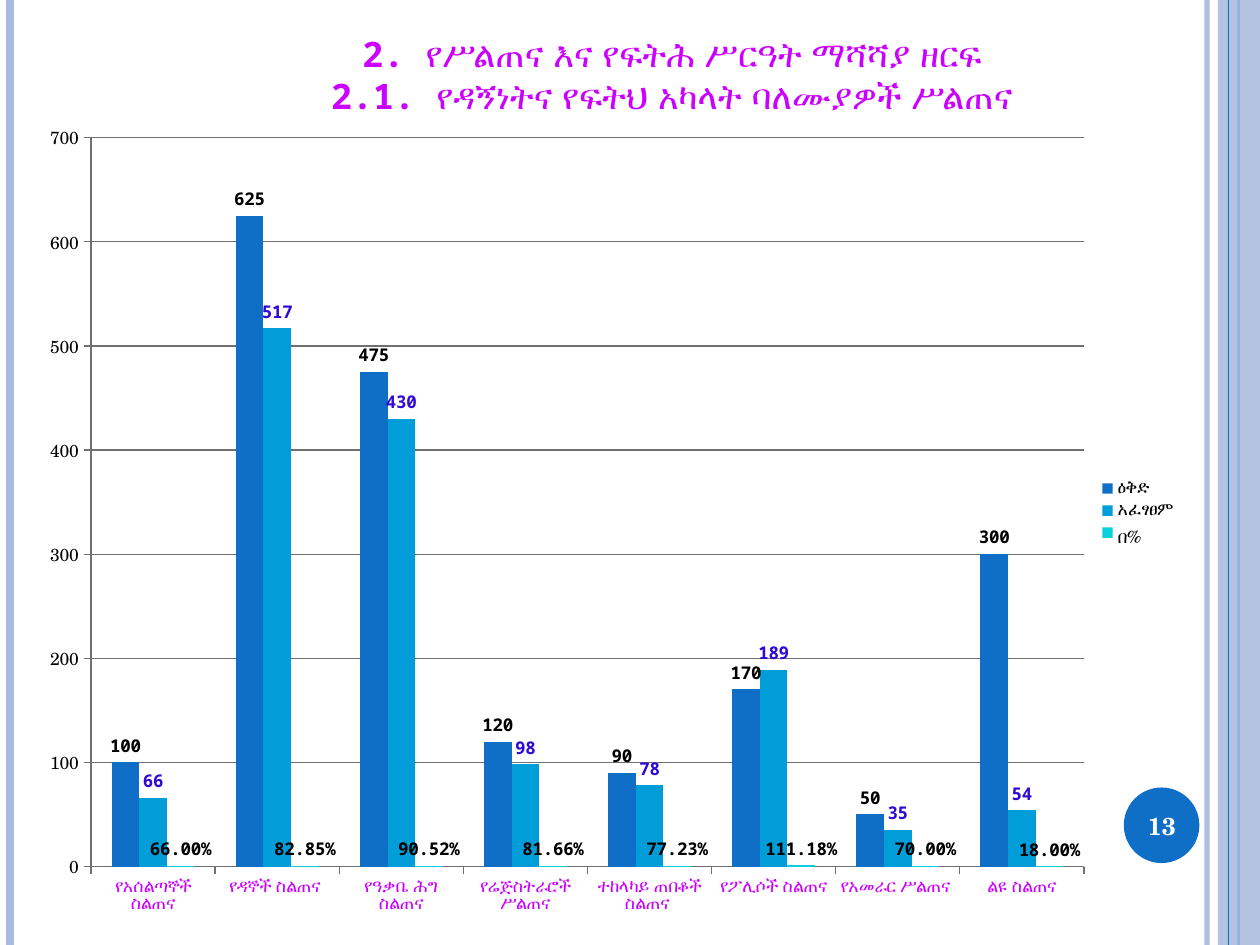
from dataclasses import dataclass
from typing import Optional

import lxml.etree
import pptx
import pptx.chart.data
import pptx.dml.color
import pptx.enum.chart
import pptx.enum.shapes
import pptx.enum.text
import pptx.oxml
import pptx.oxml.ns
import pptx.util

Pt = pptx.util.Pt
RGBColor = pptx.dml.color.RGBColor
qn = pptx.oxml.ns.qn

BLUE = RGBColor(0x0F, 0x6F, 0xC6)
SKY = RGBColor(0x00, 0x9D, 0xD9)
TURQUOISE = RGBColor(0x0B, 0xD0, 0xD9)
LAVENDER = RGBColor(0xAB, 0xBB, 0xDF)
MAGENTA = RGBColor(0xCC, 0x00, 0xFF)
VIOLET = RGBColor(0x30, 0x09, 0xD5)
GREY = RGBColor(0x70, 0x70, 0x70)
BLACK = RGBColor(0x00, 0x00, 0x00)
WHITE = RGBColor(0xFF, 0xFF, 0xFF)

MONO = "Noto Sans Mono"
SERIF = "TeX Gyre Schola"
SLIDE_WIDTH = 720
SLIDE_HEIGHT = 540


@dataclass(frozen=True)
class Stripe:
    x: float
    weight: float
    color: RGBColor
    opacity: Optional[int] = None


@dataclass(frozen=True)
class Measure:
    name: str
    values: tuple
    color: RGBColor
    label_color: RGBColor
    number_format: str = "General"


STRIPES = (
    Stripe(689.8, 3, LAVENDER, 93),
    Stripe(5.8, 4.5, LAVENDER),
    Stripe(707.8, 1.5, BLUE),
)
BAND_STRIPE = Stripe(702, 0.75, BLUE)

TRAININGS = (
    "የአሰልጣኞች ስልጠና", "የዳኞች ስልጠና ", "የዓቃቤ ሕግ ስልጠና", "የሬጅስትራሮች ሥልጠና",
    "ተከላካይ ጠበቆች ስልጠና ", "የፖሊሶች ስልጠና", "የአመራር ሥልጠና ", "ልዩ ስልጠና",
)
MEASURES = (
    Measure("ዕቅድ", (100, 625, 475, 120, 90, 170, 50, 300), BLUE, BLACK),
    Measure("አፈፃፀም", (66, 517, 430, 98, 78, 189, 35, 54), SKY, VIOLET),
    Measure("በ%", (0.66, 0.8285, 0.9052, 0.8166, 0.7723, 1.1118, 0.7, 0.18),
            TURQUOISE, BLACK, "0.00%"),
)
HEADINGS = (
    "2. የሥልጠና እና የፍትሕ ሥርዓት ማሻሻያ ዘርፍ",
    "2.1. የዳኝነትና የፍትህ አካላት ባለሙያዎች ሥልጠና",
)


def style_font(font, face: str, size: float, color: RGBColor, bold: bool) -> None:
    font.name = face
    font.size = Pt(size)
    font.color.rgb = color
    font.bold = bold


def set_opacity(properties, percent: int) -> None:
    color = next(properties.iter(qn("a:srgbClr")))
    lxml.etree.SubElement(color, qn("a:alpha")).set("val", str(percent * 1000))


def draw_stripe(slide, stripe: Stripe) -> None:
    line = slide.shapes.add_connector(
        pptx.enum.shapes.MSO_CONNECTOR.STRAIGHT,
        Pt(stripe.x), Pt(0), Pt(stripe.x), Pt(SLIDE_HEIGHT))
    line.line.color.rgb = stripe.color
    line.line.width = Pt(stripe.weight)
    properties = line._element.spPr
    if stripe.opacity is not None:
        set_opacity(properties, stripe.opacity)
    lxml.etree.SubElement(properties, qn("a:effectLst"))


def draw_solid(slide, kind, left: float, top: float, width: float, height: float,
               color: RGBColor):
    solid = slide.shapes.add_shape(kind, Pt(left), Pt(top), Pt(width), Pt(height))
    solid.shadow.inherit = False
    solid.fill.solid()
    solid.fill.fore_color.rgb = color
    solid.line.fill.background()
    return solid


def draw_page_number(slide, number: str) -> None:
    draw_solid(slide, pptx.enum.shapes.MSO_SHAPE.OVAL, 642.2, 450, 43.2, 43.2, BLUE)
    page = slide.shapes.add_textbox(Pt(640), Pt(451.4), Pt(48), Pt(41)).text_frame
    page.word_wrap = True
    page.vertical_anchor = pptx.enum.text.MSO_ANCHOR.MIDDLE
    paragraph = page.paragraphs[0]
    paragraph.alignment = pptx.enum.text.PP_ALIGN.CENTER
    run = paragraph.add_run()
    run.text = number
    style_font(run.font, SERIF, 14, WHITE, True)


def place_plot(chart, x: float, y: float, w: float, h: float) -> None:
    plot_area = next(chart._chartSpace.iter(qn("c:plotArea")))
    layout = plot_area.find(qn("c:layout"))
    if layout is None:
        layout = lxml.etree.Element(qn("c:layout"))
        plot_area.insert(0, layout)
    manual = lxml.etree.SubElement(layout, qn("c:manualLayout"))
    settings = (("layoutTarget", "inner"), ("xMode", "edge"), ("yMode", "edge"),
                ("x", x), ("y", y), ("w", w), ("h", h))
    for tag, value in settings:
        lxml.etree.SubElement(manual, qn(f"c:{tag}")).set("val", str(value))


def draw_training_chart(slide) -> None:
    data = pptx.chart.data.CategoryChartData()
    data.categories = TRAININGS
    for measure in MEASURES:
        data.add_series(measure.name, measure.values, measure.number_format)
    chart = slide.shapes.add_chart(
        pptx.enum.chart.XL_CHART_TYPE.COLUMN_CLUSTERED,
        Pt(12), Pt(60), Pt(667.5), Pt(468), data).chart
    chart.has_title = False
    style_font(chart.font, SERIF, 10, BLACK, False)
    place_plot(chart, 0.06, 0.04, 0.85, 0.89)

    chart.has_legend = True
    chart.legend.position = pptx.enum.chart.XL_LEGEND_POSITION.RIGHT
    chart.legend.include_in_layout = False

    plot = chart.plots[0]
    plot.gap_width = 150
    plot.overlap = 0
    plot.vary_by_categories = False
    for measure, series in zip(MEASURES, plot.series):
        series.format.fill.solid()
        series.format.fill.fore_color.rgb = measure.color
        labels = series.data_labels
        labels.show_value = True
        labels.number_format = measure.number_format
        labels.number_format_is_linked = False
        labels.position = pptx.enum.chart.XL_LABEL_POSITION.OUTSIDE_END
        style_font(labels.font, MONO, 10, measure.label_color, True)

    values = chart.value_axis
    values.minimum_scale = 0
    values.maximum_scale = 700
    values.major_unit = 100
    values.has_major_gridlines = True
    trainings = chart.category_axis
    style_font(trainings.tick_labels.font, MONO, 10, MAGENTA, True)
    for axis in (values, trainings):
        axis.major_tick_mark = pptx.enum.chart.XL_TICK_MARK.OUTSIDE
    for line in (values.format.line, trainings.format.line,
                 values.major_gridlines.format.line):
        line.color.rgb = GREY
        line.width = Pt(0.75)


def write_title(title) -> None:
    title.left, title.top = Pt(102), Pt(15)
    title.width, title.height = Pt(564), Pt(55.7)
    frame = title.text_frame
    frame.word_wrap = True
    frame.auto_size = pptx.enum.text.MSO_AUTO_SIZE.SHAPE_TO_FIT_TEXT
    frame.vertical_anchor = pptx.enum.text.MSO_ANCHOR.TOP
    for index, heading in enumerate(HEADINGS):
        paragraph = frame.add_paragraph() if index else frame.paragraphs[0]
        paragraph.alignment = pptx.enum.text.PP_ALIGN.CENTER
        run = paragraph.add_run()
        run.text = heading
        style_font(run.font, MONO, 20, MAGENTA, True)


def main() -> None:
    deck = pptx.Presentation()
    deck.slide_width, deck.slide_height = Pt(SLIDE_WIDTH), Pt(SLIDE_HEIGHT)
    slide = deck.slides.add_slide(deck.slide_layouts[5])
    for stripe in STRIPES:
        draw_stripe(slide, stripe)
    band = draw_solid(slide, pptx.enum.shapes.MSO_SHAPE.RECTANGLE,
                      696, 0, 24, SLIDE_HEIGHT, LAVENDER)
    set_opacity(band._element.spPr, 87)
    draw_stripe(slide, BAND_STRIPE)
    draw_page_number(slide, "13")
    draw_training_chart(slide)
    write_title(slide.shapes.title)
    deck.save("out.pptx")


if __name__ == "__main__":
    main()
